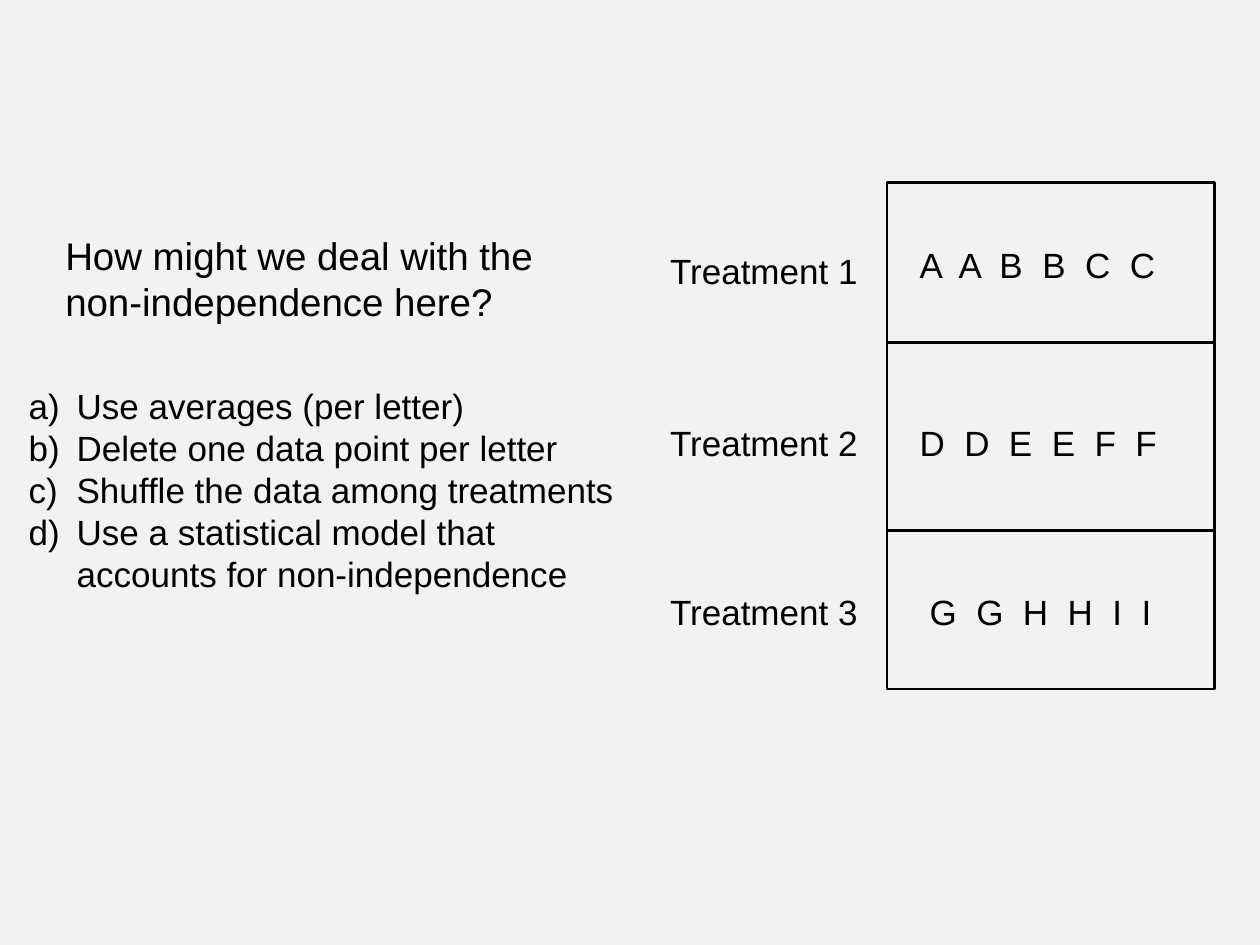
import pptx
import pptx.dml.color
import pptx.enum.shapes
import pptx.enum.text
import pptx.oxml
import pptx.util
from pptx.util import Inches

COLORS = {"background": "F2F2F2", "ink": "000000"}
FONT = "Arial"
LINE_WIDTH = 1.5
BODY_SIZE = 20
QUESTION_SIZE = 22


def color(name):
    return pptx.dml.color.RGBColor.from_string(COLORS[name])


def add_text(slide, left, top, width, height, lines, size=BODY_SIZE, wrap=False):
    """Place one text box, with one paragraph per line."""
    box = slide.shapes.add_textbox(left, top, width, height)
    frame = box.text_frame
    frame.word_wrap = wrap
    frame.auto_size = pptx.enum.text.MSO_AUTO_SIZE.SHAPE_TO_FIT_TEXT
    for index, line in enumerate(lines):
        paragraph = frame.paragraphs[0] if index == 0 else frame.add_paragraph()
        run = paragraph.add_run()
        run.text = line
        run.font.name = FONT
        run.font.size = pptx.util.Pt(size)
        run.font.color.rgb = color("ink")
    return frame


def add_question(slide, left, top, width, height):
    add_text(slide, left, top, width, height,
             ["How might we deal with the", "non-independence here?"],
             QUESTION_SIZE)


def add_answers(slide, left, top, width, height):
    answers = ["Use averages (per letter)",
               "Delete one data point per letter",
               "Shuffle the data among treatments",
               "Use a statistical model that"]
    continuation = "accounts for non-independence"
    frame = add_text(slide, left, top, width, height,
                     answers + [continuation], wrap=True)
    hanging = Inches(0.38)
    for index, paragraph in enumerate(frame.paragraphs):
        properties = paragraph._p.get_or_add_pPr()
        properties.set("marL", str(hanging))
        # The continuation line has no letter of its own
        if index < len(answers):
            properties.set("indent", str(-hanging))
            numbering = pptx.oxml.xmlchemy.OxmlElement("a:buAutoNum")
            numbering.set("type", "alphaLcParenR")
            properties.append(numbering)


def add_treatments(slide, left, top, width, height):
    """Draw the framed plot, its dividers, and a label and letters per row."""
    label_left = left - Inches(1.82)
    text_height = Inches(0.44)

    # Frame
    frame = slide.shapes.add_shape(
        pptx.enum.shapes.MSO_SHAPE.RECTANGLE, left, top, width, height)
    frame.shadow.inherit = False
    frame.fill.background()
    frame.line.color.rgb = color("ink")
    frame.line.width = pptx.util.Pt(LINE_WIDTH)

    # Dividers
    for offset in (1.27, 2.76):
        y = top + Inches(offset)
        divider = slide.shapes.add_connector(
            pptx.enum.shapes.MSO_CONNECTOR.STRAIGHT, left, y, left + width, y)
        divider.line.color.rgb = color("ink")
        divider.line.width = pptx.util.Pt(LINE_WIDTH)
        divider._element.spPr.append(
            pptx.oxml.xmlchemy.OxmlElement("a:effectLst"))

    # Rows: letters, label offset, letters offset, letters inset and width
    rows = [("AABBCC", 0.48, 0.43, 0.16, 2.11),
            ("DDEEFF", 1.85, 1.85, 0.16, 2.1),
            ("GGHHII", 3.19, 3.19, 0.24, 1.97)]
    for number, (letters, label_y, letters_y, inset, span) in enumerate(rows, 1):
        add_text(slide, label_left, top + Inches(label_y), Inches(1.7),
                 text_height, [f"Treatment {number}"])
        add_text(slide, left + Inches(inset), top + Inches(letters_y),
                 Inches(span), text_height, ["  ".join(letters)])


def main():
    presentation = pptx.Presentation()
    presentation.slide_width = Inches(10)
    presentation.slide_height = Inches(7.5)
    slide = presentation.slides.add_slide(presentation.slide_layouts[6])
    slide.background.fill.solid()
    slide.background.fill.fore_color.rgb = color("background")

    add_question(slide, Inches(0.42), Inches(1.79), Inches(3.96), Inches(0.84))
    add_treatments(slide, Inches(7.04), Inches(1.45), Inches(2.6), Inches(4.02))
    add_answers(slide, Inches(0.13), Inches(3), Inches(4.97), Inches(1.78))

    presentation.save("out.pptx")


if __name__ == "__main__":
    main()
